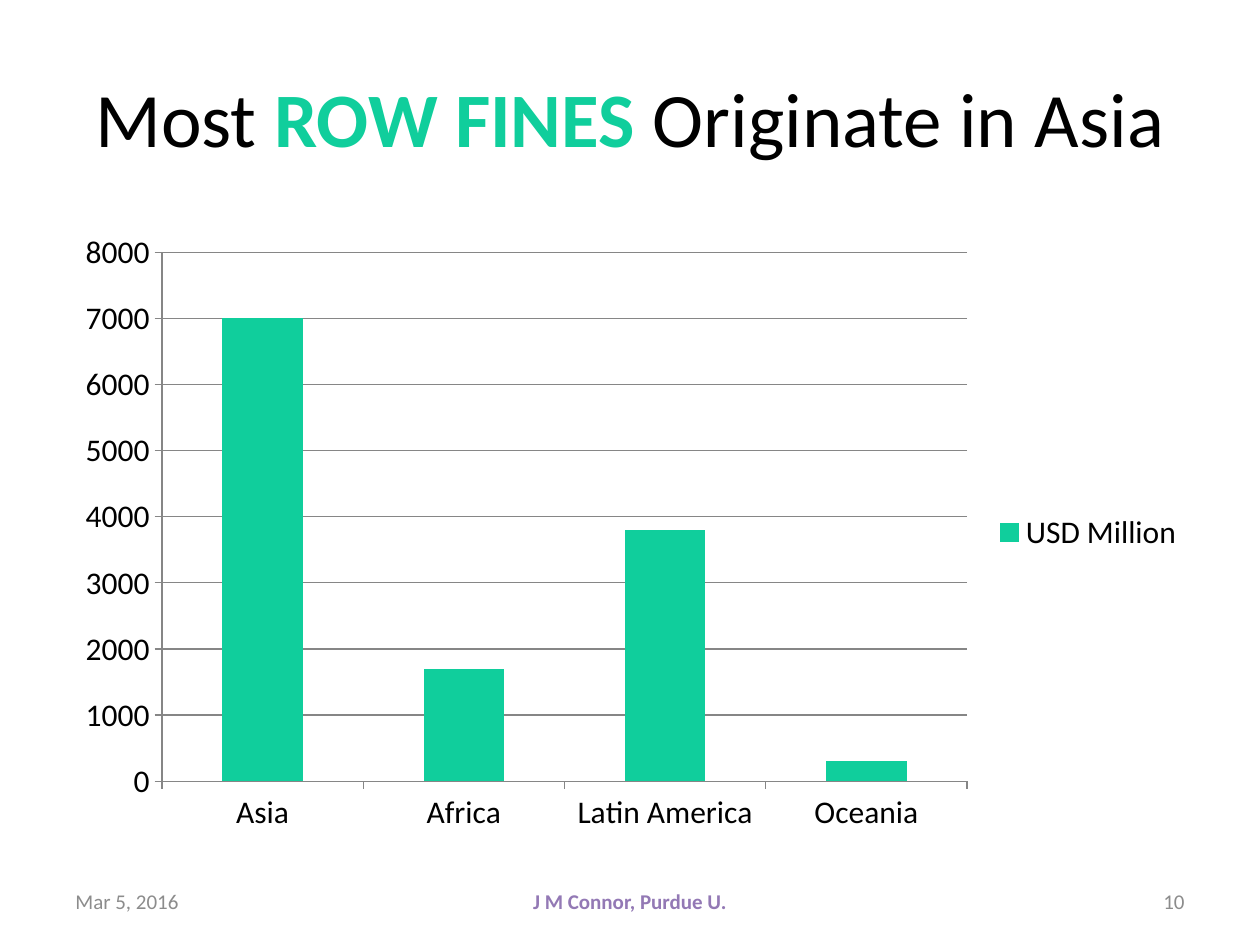
from pptx import Presentation
from pptx.chart.data import CategoryChartData
from pptx.dml.color import RGBColor
from pptx.enum.chart import XL_CHART_TYPE, XL_LEGEND_POSITION, XL_TICK_MARK
from pptx.enum.text import MSO_ANCHOR, PP_ALIGN
from pptx.util import Cm, Pt

BLACK, GREEN, GREY, PURPLE, AXIS = "000000", "10CE9C", "8C8C8C", "9379B5", "868686"


def rgb(color):
    return RGBColor.from_string(color)


class Deck:
    font = "Calibri"

    def __init__(self, width, height):
        self.prs = Presentation()
        self.prs.slide_width, self.prs.slide_height = Cm(width), Cm(height)
        self.s = None

    def slide(self):
        self.s = self.prs.slides.add_slide(self.prs.slide_layouts[6])

    def set_font(self, font, size, color, bold=False):
        font.name, font.size, font.bold = self.font, Pt(size), bold
        font.color.rgb = rgb(color)

    def text(self, box, runs, size, align):
        sp = self.s.shapes.add_textbox(*map(Cm, box))
        tf = sp.text_frame
        tf.word_wrap = True
        tf.vertical_anchor = MSO_ANCHOR.MIDDLE
        p = tf.paragraphs[0]
        p.alignment = align
        for words, color, bold in runs:
            r = p.add_run()
            r.text = words
            self.set_font(r.font, size, color, bold)

    def column_chart(self, box, categories, name, values, color):
        data = CategoryChartData(number_format="0")
        data.categories = categories
        data.add_series(name, values)
        chart = self.s.shapes.add_chart(
            XL_CHART_TYPE.COLUMN_STACKED, *map(Cm, box), data).chart
        self.set_font(chart.font, 18, BLACK)
        chart.has_title = False
        chart.has_legend = True
        chart.legend.position = XL_LEGEND_POSITION.RIGHT
        chart.legend.include_in_layout = False
        plot = chart.plots[0]
        plot.gap_width, plot.overlap = 150, 100
        plot.vary_by_categories = False
        fill = plot.series[0].format.fill
        fill.solid()
        fill.fore_color.rgb = rgb(color)
        chart.value_axis.has_major_gridlines = True
        for axis in (chart.category_axis, chart.value_axis):
            axis.major_tick_mark = XL_TICK_MARK.OUTSIDE
            axis.minor_tick_mark = XL_TICK_MARK.NONE
            self.line(axis.format.line)
        self.line(chart.value_axis.major_gridlines.format.line)

    def line(self, line):
        line.color.rgb = rgb(AXIS)
        line.width = Pt(0.75)

    def save(self):
        self.prs.save("out.pptx")


def main():
    deck = Deck(25.4, 19.05)
    deck.slide()
    deck.text((1.27, 0.76, 22.86, 3.18),
              [("Most", BLACK, False), (" ROW FINES ", GREEN, True),
               ("Originate in Asia", BLACK, False)], 44, PP_ALIGN.CENTER)
    deck.column_chart((1.27, 4.45, 22.86, 12.57),
                      ["Asia", "Africa", "Latin America", "Oceania"],
                      "USD Million", [7000, 1700, 3800, 300], GREEN)
    footers = [
        (1.27, 5.93, "Mar 5, 2016", GREY, False, PP_ALIGN.LEFT),
        (8.68, 8.04, "J M Connor, Purdue U.", PURPLE, True, PP_ALIGN.CENTER),
        (18.2, 5.93, "10", GREY, False, PP_ALIGN.RIGHT),
    ]
    for left, width, words, color, bold, align in footers:
        deck.text((left, 17.66, width, 1.01), [(words, color, bold)], 12, align)
    deck.save()


if __name__ == "__main__":
    main()
